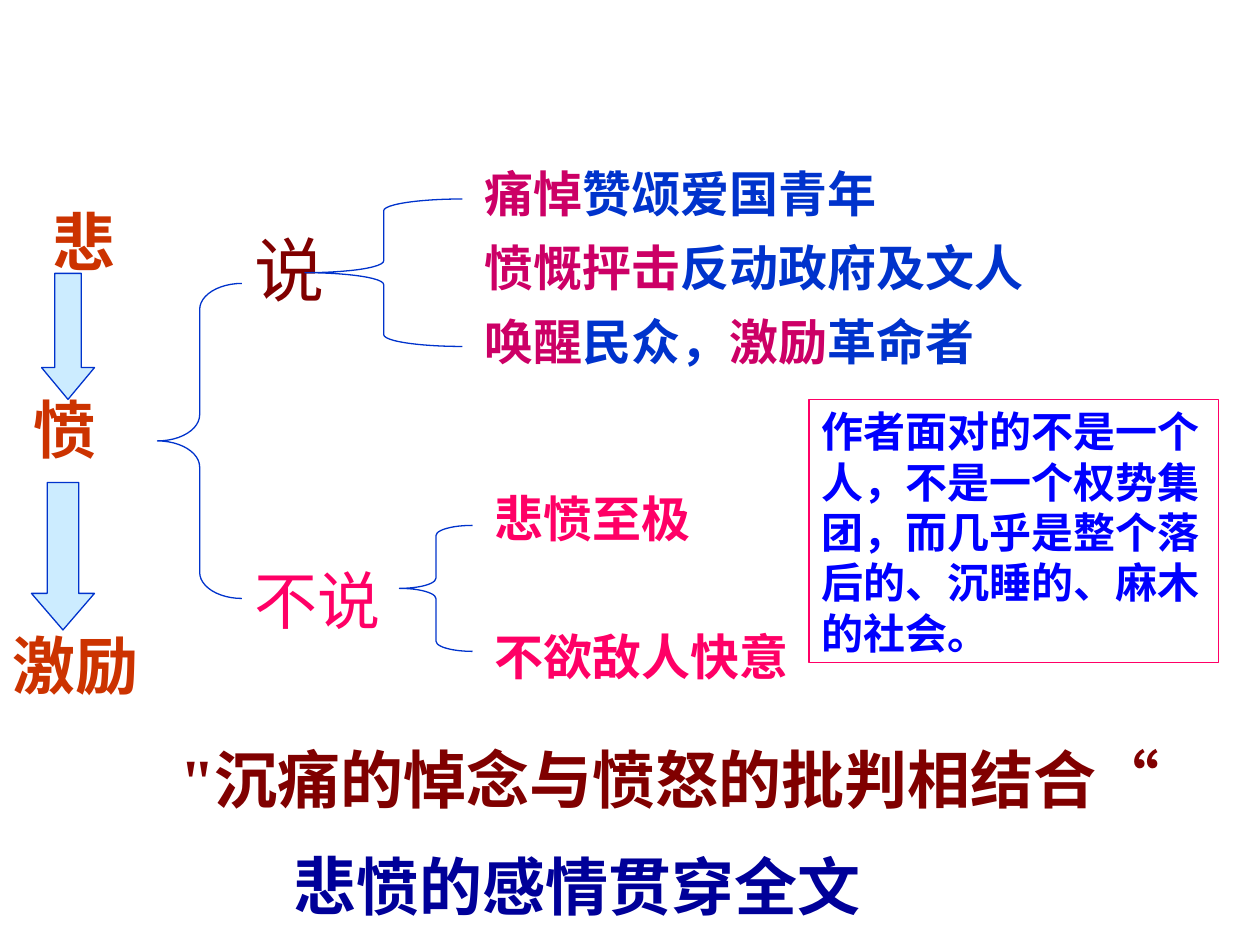
from pptx import Presentation
from pptx.dml.color import RGBColor
from pptx.enum.shapes import MSO_SHAPE
from pptx.util import Inches, Pt

LEFT_BRACE = MSO_SHAPE.LEFT_BRACE
DOWN_ARROW = MSO_SHAPE.DOWN_ARROW
RECTANGLE = MSO_SHAPE.RECTANGLE

THEME = {
    "serif": "Times New Roman",
    "sans": "Arial",
    "line": "0033CC",
    "arrow": "CCECFF",
    "frame": "FF0066",
    "line_width": 0.75,
    "speak": {"size": 40, "bold": False, "color": "800000"},
    "silent": {"size": 36, "bold": False, "color": "FF0066"},
    "emotion": {"size": 28, "bold": True, "color": "CC0066"},
    "target": {"size": 28, "bold": True, "color": "0033CC"},
    "reason": {"size": 28, "bold": True, "color": "FF0066"},
    "note": {"size": 24, "bold": True, "color": "0000FF"},
    "stage": {"size": 36, "bold": True, "color": "CC3300"},
    "summary": {"size": 36, "bold": True, "color": "800000"},
    "conclusion": {"size": 36, "bold": True, "color": "000099", "name": "Arial"},
}

LABELS = [
    ((1.92, 1.75, 1.67, 1.35), [("说", "speak")]),
    ((1.92, 4.41, 1.42, 1.49), [("不说", "silent")]),
    ((3.83, 3.83, 4.5, 1.16), [("悲愤至极", "reason")]),
    ((3.83, 4.92, 4, 0.57), [("不欲敌人快意", "reason")]),
    ((0.17, 3.05, 0.92, 0.69), [("愤", "stage")]),
    ((0, 4.92, 1.25, 0.69), [("激励", "stage")]),
]
VERTICAL_LABEL = ((-0.44, 1.58, 1.44, 3.24), [("悲", "stage")])

SPOKEN_LEFT, SPOKEN_TOP, SPOKEN_PITCH = 3.75, 1.25, 0.585
SPOKEN = [
    (4, 0.57, [("痛悼", "emotion"), ("赞颂爱国青年", "target")]),
    (4.92, 0.57, [("愤慨抨击", "emotion"), ("反动政府及文人", "target")]),
    (4.67, 1.16, [("唤醒", "emotion"), ("民众，", "target"),
                  ("激励", "emotion"), ("革命者", "target")]),
]

NOTE = ((6.42, 3.17, 3.25, 2.09),
        [("作者面对的不是一个人，不是一个权势集团，而几乎是整个落后的、沉睡的、麻木的社会。", "note")])
SUMMARY_BOX = (1.33, 5.83, 8.17, 1.59)
SUMMARY = [("\"沉痛的悼念与愤怒的批判相结合“", "summary")]
CONCLUSION = [("悲愤的感情贯穿全文", "conclusion")]
CONCLUSION_INDENT = 0.9
CONCLUSION_SPACE = 18

BRACES = [
    ((1.25, 2.25, 0.67, 2.5), (0.31, 0.5)),
    ((2.42, 1.58, 1.25, 1.17), (0.08, 0.5)),
    ((3.17, 4.17, 0.58, 1), (0.14, 0.5)),
]
ARROWS = [
    ((0.33, 2.17, 0.42, 1), (0.5, 0.6)),
    ((0.25, 3.83, 0.5, 1.17), (0.5, 0.58)),
]


def write_runs(paragraph, runs):
    """Add styled runs to a paragraph."""
    for text, style in runs:
        run = paragraph.add_run()
        run.text = text
        values = {"name": THEME["serif"], **THEME[style]}
        run.font.color.rgb = RGBColor.from_string(values.pop("color"))
        values["size"] = Pt(values["size"])
        for attribute, value in values.items():
            setattr(run.font, attribute, value)


def add_text(slide, box, runs):
    """Add a wrapping text box and return it."""
    shape = slide.shapes.add_textbox(*map(Inches, box))
    shape.text_frame.word_wrap = True
    write_runs(shape.text_frame.paragraphs[0], runs)
    return shape


def add_outline(slide, kind, box, line, adjustments=(), fill=None):
    """Add a preset shape with a thin outline and return it."""
    shape = slide.shapes.add_shape(kind, *map(Inches, box))
    shape.shadow.inherit = False
    for index, value in enumerate(adjustments):
        shape.adjustments[index] = value
    if fill:
        shape.fill.solid()
        shape.fill.fore_color.rgb = RGBColor.from_string(fill)
    else:
        shape.fill.background()
    shape.line.color.rgb = RGBColor.from_string(line)
    shape.line.width = Pt(THEME["line_width"])
    return shape


def add_note(slide):
    """Add the framed note."""
    box, runs = NOTE
    shape = add_outline(slide, RECTANGLE, box, THEME["frame"])
    frame = shape.text_frame
    frame.word_wrap = True
    frame.vertical_anchor = MSO_ANCHOR_TOP
    frame.paragraphs[0].alignment = PP_ALIGN_LEFT
    write_runs(frame.paragraphs[0], runs)


def add_summary(slide):
    """Add the two closing lines."""
    shape = add_text(slide, SUMMARY_BOX, SUMMARY)
    paragraph = shape.text_frame.add_paragraph()
    paragraph.space_before = Pt(CONCLUSION_SPACE)
    properties = paragraph._p.get_or_add_pPr()
    properties.set("marL", str(Inches(CONCLUSION_INDENT)))
    properties.set("indent", "0")
    write_runs(paragraph, CONCLUSION)


def main():
    """Build the slide and save it."""
    presentation = Presentation()
    presentation.slide_width, presentation.slide_height = Inches(10), Inches(7.5)
    slide = presentation.slides.add_slide(presentation.slide_layouts[6])
    for box, runs in LABELS:
        add_text(slide, box, runs)
    for row, (width, height, runs) in enumerate(SPOKEN):
        top = SPOKEN_TOP + row * SPOKEN_PITCH
        add_text(slide, (SPOKEN_LEFT, top, width, height), runs)
    for box, adjustments in BRACES:
        add_outline(slide, LEFT_BRACE, box, THEME["line"], adjustments)
    add_summary(slide)
    add_note(slide)
    vertical = add_text(slide, *VERTICAL_LABEL)
    vertical.element.txBody.bodyPr.set("vert", "eaVert")
    for box, adjustments in ARROWS:
        add_outline(slide, DOWN_ARROW, box, THEME["line"], adjustments, THEME["arrow"])
    presentation.save("out.pptx")


from pptx.enum.text import MSO_ANCHOR, PP_ALIGN

MSO_ANCHOR_TOP = MSO_ANCHOR.TOP
PP_ALIGN_LEFT = PP_ALIGN.LEFT

if __name__ == "__main__":
    main()
